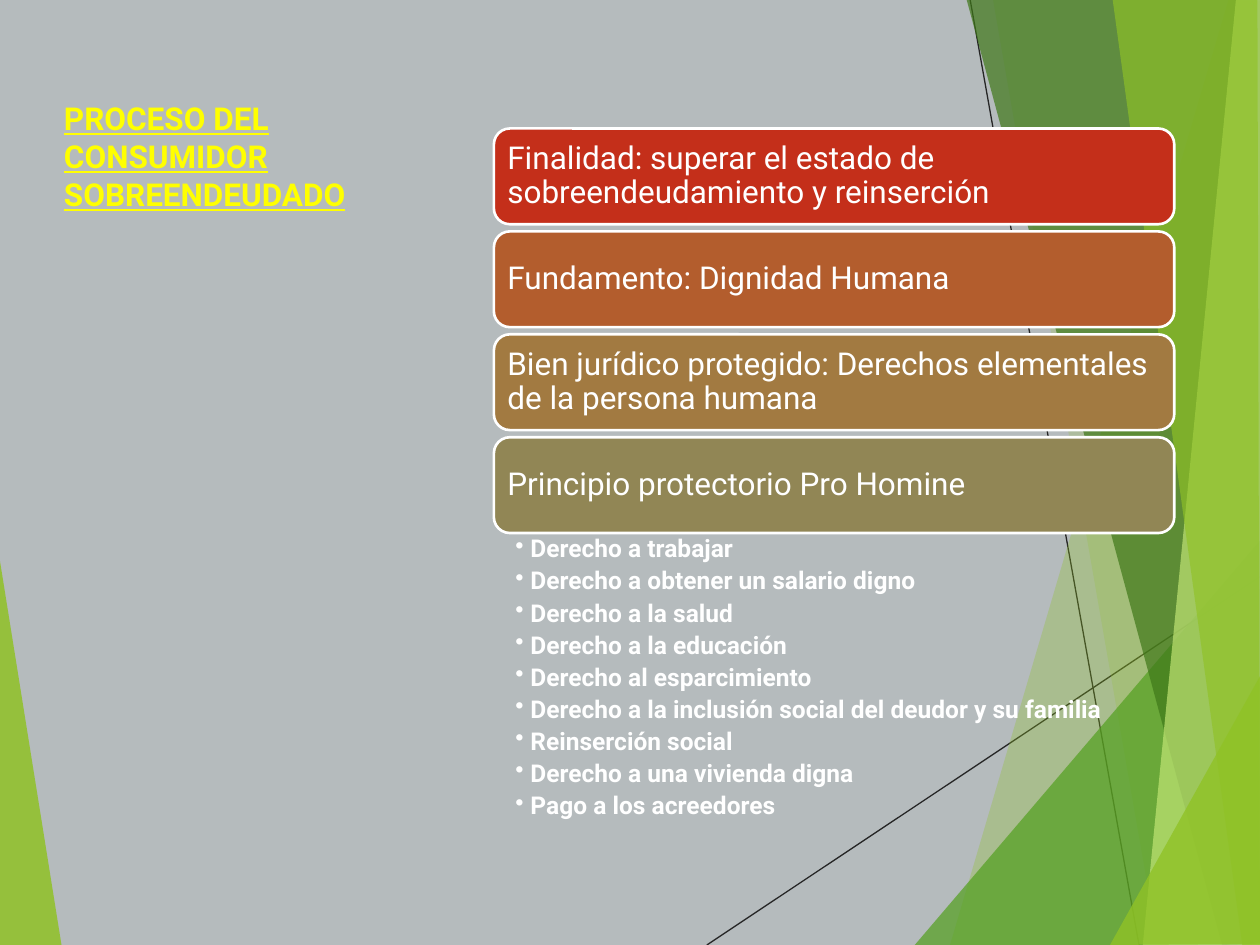
"""Build the slide on the over-indebted consumer process."""
from typing import Any, NamedTuple

from lxml.etree import SubElement
from pptx import Presentation
from pptx.dml.color import RGBColor
from pptx.enum.shapes import MSO_CONNECTOR as Connector, MSO_SHAPE as Preset
from pptx.enum.text import MSO_ANCHOR as Anchor, PP_ALIGN as Align
from pptx.oxml.ns import qn
from pptx.util import Inches, Pt

BACKDROP = RGBColor(0xB5, 0xBB, 0xBD)
INK = RGBColor(0x26, 0x26, 0x26)
WHITE = RGBColor(0xFF, 0xFF, 0xFF)
YELLOW = RGBColor(0xFF, 0xFF, 0x00)
LIME = RGBColor(0x90, 0xC2, 0x26)
GREEN = RGBColor(0x54, 0xA0, 0x21)
FOREST = RGBColor(0x3F, 0x78, 0x19)
PALE_LIME = RGBColor(0xC0, 0xE4, 0x74)
RED = RGBColor(0xC4, 0x2F, 0x1A)
RUST = RGBColor(0xB3, 0x5D, 0x2D)
OCHRE = RGBColor(0xA2, 0x7A, 0x41)
OLIVE = RGBColor(0x91, 0x86, 0x55)

TITLE_FONT = {"name": "Roboto", "size": Pt(18), "bold": True, "underline": True}
BAR_FONT = {"name": "Roboto", "size": Pt(18)}
RIGHT_FONT = {"name": "Roboto", "size": Pt(14), "bold": True}
BAR_FRAME = {"word_wrap": True, "vertical_anchor": Anchor.MIDDLE,
             **{f"margin_{side}": Inches(0.07) for side in ("left", "right", "top", "bottom")}}
RIGHTS_FRAME = {"word_wrap": True, "vertical_anchor": Anchor.TOP,
                "margin_left": Inches(0.17), "margin_right": Inches(0.14),
                "margin_top": Inches(0.03), "margin_bottom": Inches(0.03)}
RIGHT_PARAGRAPH = {"line_spacing": 0.9, "space_after": Pt(3.2)}

BAR_LEFT, BAR_TOP, BAR_WIDTH, BAR_HEIGHT = 3.92, 1.02, 5.4, 0.76
BAR_PITCH = 0.817
BULLET_INDENT = Inches(0.12)


class Facet(NamedTuple):
    """A translucent polygon of the decoration."""
    color: RGBColor
    opacity: int
    points: list[tuple[float, float]]


class Ray(NamedTuple):
    """A thin line of the decoration."""
    start: tuple[float, float]
    end: tuple[float, float]


class Bar(NamedTuple):
    """A heading bar of the list."""
    text: str
    color: RGBColor


RAYS = [Ray((5.61, 7.5), (10.01, 4.57)), Ray((7.7, 0), (9.04, 7.5))]
FACETS = [
    Facet(LIME, 85, [(-0.01, 4.39), (0.49, 7.51), (-0.01, 7.5)]),
    Facet(LIME, 30, [(9.75, 0), (7.54, 7.5), (10.02, 7.51), (10.01, 0.01)]),
    Facet(LIME, 20, [(7.88, -0.01), (9.19, 7.5), (10.01, 7.5), (10.01, -0.01)]),
    Facet(GREEN, 72, [(7.26, 7.5), (10, 4.29), (10.01, 7.5)]),
    Facet(FOREST, 70, [(7.67, -0.01), (9.7, 7.5), (10.01, 7.49), (10.01, -0.01)]),
    Facet(PALE_LIME, 70, [(9.81, -0.01), (9.07, 7.5), (10.01, 7.5), (10, -0.01)]),
    Facet(LIME, 65, [(8.83, -0.01), (9.86, 7.5), (10, 7.5), (9.98, -0.01)]),
    Facet(LIME, 80, [(8.81, 7.5), (10.01, 5.35), (10.01, 7.49)]),
]
BARS = [
    Bar("Finalidad: superar el estado de sobreendeudamiento y reinserción", RED),
    Bar("Fundamento: Dignidad Humana", RUST),
    Bar("Bien jurídico protegido: Derechos elementales de la persona humana", OCHRE),
    Bar("Principio protectorio Pro Homine", OLIVE),
]
RIGHTS = [
    "Derecho a trabajar",
    "Derecho a obtener un salario digno",
    "Derecho a la salud",
    "Derecho a la educación",
    "Derecho al esparcimiento",
    "Derecho a la inclusión social del deudor y su familia",
    "Reinserción social",
    "Derecho a una vivienda digna",
    "Pago a los acreedores",
]


def apply_format(target: Any, values: dict[str, Any]) -> None:
    """Set every named attribute on the target."""
    for name, value in values.items():
        setattr(target, name, value)


def write(paragraph: Any, text: str, font: dict[str, Any], color: RGBColor) -> None:
    """Add one formatted run to a left-aligned paragraph."""
    paragraph.alignment = Align.LEFT
    run = paragraph.add_run()
    run.text = text
    apply_format(run.font, font)
    run.font.color.rgb = color


def draw_ray(shapes: Any, ray: Ray) -> None:
    """Draw a thin line without shadow."""
    line = shapes.add_connector(Connector.STRAIGHT, *map(Inches, ray.start + ray.end))
    line.line.color.rgb = INK
    line.line.width = Pt(0.75)
    SubElement(line._element.spPr, qn("a:effectLst"))


def draw_facet(shapes: Any, facet: Facet) -> None:
    """Draw a translucent polygon."""
    start, *rest = [(Inches(x), Inches(y)) for x, y in facet.points]
    builder = shapes.build_freeform(*start)
    builder.add_line_segments(rest, close=True)
    polygon = builder.convert_to_shape()
    polygon.shadow.inherit = False
    polygon.line.fill.background()
    polygon.fill.solid()
    polygon.fill.fore_color.rgb = facet.color
    tint = polygon._element.spPr.find(f"{qn('a:solidFill')}/{qn('a:srgbClr')}")
    SubElement(tint, qn("a:alpha"), val=str(facet.opacity * 1000))


def draw_bar(shapes: Any, bar: Bar, top: float) -> None:
    """Draw a rounded heading bar."""
    box = shapes.add_shape(Preset.ROUNDED_RECTANGLE, Inches(BAR_LEFT), Inches(top),
                           Inches(BAR_WIDTH), Inches(BAR_HEIGHT))
    box.shadow.inherit = False
    box.fill.solid()
    box.fill.fore_color.rgb = bar.color
    box.line.color.rgb = WHITE
    box.line.width = Pt(1.5)
    apply_format(box.text_frame, BAR_FRAME)
    heading = box.text_frame.paragraphs[0]
    heading.line_spacing = 0.9
    write(heading, bar.text, BAR_FONT, WHITE)


def draw_title(shapes: Any, text: str) -> None:
    """Draw the underlined title."""
    title = shapes.add_textbox(Inches(0.41), Inches(0.74), Inches(2.96), Inches(5.69))
    title.text_frame.word_wrap = True
    write(title.text_frame.paragraphs[0], text, TITLE_FONT, YELLOW)


def draw_rights(shapes: Any, rights: list[str]) -> None:
    """Draw the bulleted list of rights."""
    frame = shapes.add_textbox(Inches(BAR_LEFT), Inches(4.23),
                               Inches(BAR_WIDTH), Inches(2.24)).text_frame
    apply_format(frame, RIGHTS_FRAME)
    for index, right in enumerate(rights):
        paragraph = frame.add_paragraph() if index else frame.paragraphs[0]
        apply_format(paragraph, RIGHT_PARAGRAPH)
        write(paragraph, right, RIGHT_FONT, WHITE)
        properties = paragraph._p.get_or_add_pPr()
        properties.set("marL", str(BULLET_INDENT))
        properties.set("indent", str(-BULLET_INDENT))
        SubElement(properties, qn("a:buChar"), char="•")


def main() -> None:
    """Compose and save the slide."""
    deck = Presentation()
    deck.slide_width, deck.slide_height = Inches(10), Inches(7.5)
    slide = deck.slides.add_slide(deck.slide_layouts[6])
    slide.background.fill.solid()
    slide.background.fill.fore_color.rgb = BACKDROP
    for ray in RAYS:
        draw_ray(slide.shapes, ray)
    for facet in FACETS:
        draw_facet(slide.shapes, facet)
    draw_title(slide.shapes, "PROCESO DEL CONSUMIDOR SOBREENDEUDADO")
    for row, bar in enumerate(BARS):
        draw_bar(slide.shapes, bar, BAR_TOP + row * BAR_PITCH)
    draw_rights(slide.shapes, RIGHTS)
    deck.save("out.pptx")


if __name__ == "__main__":
    main()
